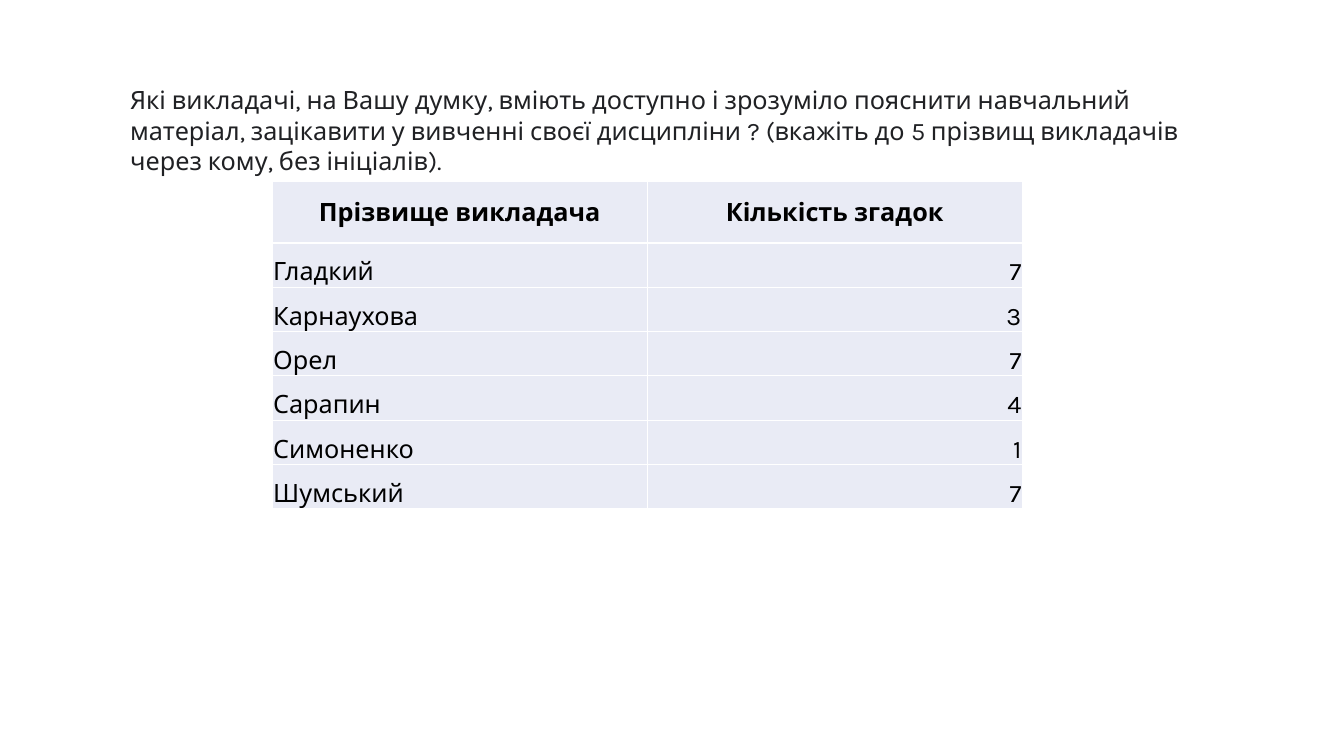
from dataclasses import dataclass

from lxml.etree import SubElement
from pptx import Presentation
from pptx.dml.color import RGBColor
from pptx.enum.text import MSO_ANCHOR, MSO_AUTO_SIZE, PP_ALIGN
from pptx.oxml.ns import qn
from pptx.util import Inches, Pt


@dataclass(frozen=True)
class Theme:
    font: str = "Karla"
    size: int = 18
    title: str = "202124"
    ink: str = "000000"
    fill: str = "E9EBF5"
    rule: str = "FFFFFF"
    width: int = 1


THEME = Theme()
QUERY = ("Які викладачі, на Вашу думку, вміють доступно і зрозуміло пояснити "
         "навчальний матеріал, зацікавити у вивченні своєї дисципліни ? "
         "(вкажіть до 5 прізвищ викладачів через кому, без ініціалів).")
HEADS = ("Прізвище викладача", "Кількість згадок")
VOTES = (("Гладкий", 7), ("Карнаухова", 3), ("Орел", 7),
         ("Сарапин", 4), ("Симоненко", 1), ("Шумський", 7))


def apply(item, values):
    for name, value in values.items():
        setattr(item, name, value)


def write(frame, text, color, align, bold=False):
    frame.text = text
    para = frame.paragraphs[0]
    para.alignment = align
    font = para.runs[0].font
    apply(font, {"name": THEME.font, "size": Pt(THEME.size), "bold": bold})
    font.color.rgb = RGBColor.from_string(color)


def add_title(slide):
    title = slide.shapes.title
    apply(title, {"left": Inches(1.19), "top": Inches(0.79),
                  "width": Inches(11.25), "height": Inches(1.01)})
    frame = title.text_frame
    apply(frame, {"word_wrap": True, "auto_size": MSO_AUTO_SIZE.NONE,
                  "vertical_anchor": MSO_ANCHOR.TOP})
    write(frame, QUERY, THEME.title, PP_ALIGN.LEFT)


def add_rules(cell):
    """Draw the cell's four borders, placed before its fill as the schema asks."""
    props = cell._tc.get_or_add_tcPr()
    for spot, side in enumerate(("lnL", "lnR", "lnT", "lnB")):
        line = SubElement(props, qn(f"a:{side}"), w=str(Pt(THEME.width)))
        paint = SubElement(line, qn("a:solidFill"))
        SubElement(paint, qn("a:srgbClr"), val=THEME.rule)
        props.insert(spot, line)


def fill_cell(cell, text, align, head):
    edge = Inches(0.01)
    apply(cell, {"margin_left": edge, "margin_right": edge,
                 "margin_top": edge, "margin_bottom": 0,
                 "vertical_anchor": MSO_ANCHOR.MIDDLE if head else MSO_ANCHOR.BOTTOM})
    write(cell.text_frame, text, THEME.ink, align, head)
    cell.fill.solid()
    cell.fill.fore_color.rgb = RGBColor.from_string(THEME.fill)
    add_rules(cell)


def add_votes(slide):
    rows = (HEADS, *VOTES)
    table = slide.shapes.add_table(
        len(rows), len(HEADS), Inches(2.7), Inches(1.8),
        Inches(7.44), Inches(3.25)).table
    apply(table, {"first_row": False, "horz_banding": False})
    for r, row in enumerate(rows):
        head = r == 0
        table.rows[r].height = Inches(0.61 if head else 0.44)
        sides = (PP_ALIGN.CENTER,) * 2 if head else (PP_ALIGN.LEFT, PP_ALIGN.RIGHT)
        for c, (value, align) in enumerate(zip(row, sides)):
            fill_cell(table.cell(r, c), str(value), align, head)


def main():
    deck = Presentation()
    apply(deck, {"slide_width": Inches(13.33), "slide_height": Inches(7.5)})
    slide = deck.slides.add_slide(deck.slide_layouts[5])
    add_title(slide)
    add_votes(slide)
    deck.save("out.pptx")


if __name__ == "__main__":
    main()
